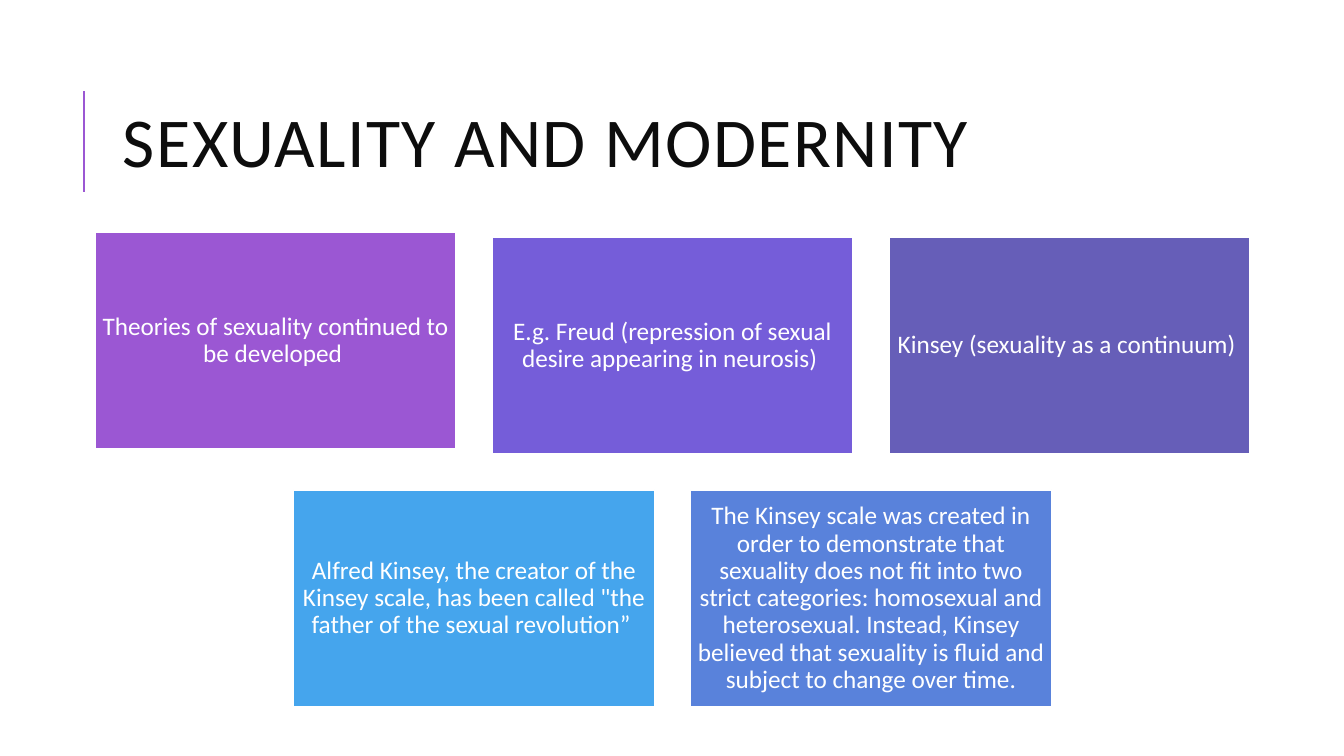
"""Build the slide on sexuality and modernity: a title over five cards."""
import pptx
import pptx.dml.color
import pptx.enum.shapes
import pptx.enum.text
import pptx.util
from dataclasses import dataclass
from lxml import etree

TITLE = "SEXUALITY AND MODERNITY"
ROWS = [
    [
        ("Theories of sexuality continued to be developed ", "9B57D3"),
        ("E.g. Freud (repression of sexual desire appearing in neurosis) ", "755DD9"),
        ("Kinsey (sexuality as a continuum) ", "665EB8"),
    ],
    [
        ("Alfred Kinsey, the creator of the Kinsey scale, has been called "
         "\"the father of the sexual revolution” ", "45A5ED"),
        ("The Kinsey scale was created in order to demonstrate that sexuality "
         "does not fit into two strict categories: homosexual and heterosexual. "
         "Instead, Kinsey believed that sexuality is fluid and subject to change "
         "over time.", "5982DB"),
    ],
]

EMU_PER_PX = 914400 / 100.8
SLIDE_W, SLIDE_H = 1344, 756
TITLE_BOX = (113, 65, 1072, 165)
RULE_X, RULE_TOP, RULE_BOTTOM = 84, 91, 192
CARD_W, CARD_H, GAP = 361, 217, 36
GRID_LEFT, GRID_TOP = 95, 237
FIRST_CARD_LIFT = 5
CARD_INSET, TITLE_INSET_X, TITLE_INSET_Y = 7, 10, 5


@dataclass(frozen=True)
class Theme:
    font: str = "Calibri"
    accent: str = "9B57D3"
    ink: str = "0D0D0D"
    white: str = "FFFFFF"
    title_size: int = 50
    card_size: int = 18
    rule_width: float = 1.5
    border_width: float = 1.25


theme = Theme()


def px(n):
    return pptx.util.Emu(round(n * EMU_PER_PX))


def rgb(code):
    return pptx.dml.color.RGBColor.from_string(code)


def write(sp, text, size, color, align="LEFT", leading=1.0, after=0, spacing=0,
          inset=(0, 0)):
    tf = sp.text_frame
    tf.word_wrap = True
    tf.vertical_anchor = pptx.enum.text.MSO_ANCHOR.MIDDLE
    tf.margin_left = tf.margin_right = px(inset[0])
    tf.margin_top = tf.margin_bottom = px(inset[1])
    p = tf.paragraphs[0]
    p.alignment = getattr(pptx.enum.text.PP_ALIGN, align)
    p.line_spacing = leading
    p.space_after = pptx.util.Pt(after)
    r = p.add_run()
    r.text = text
    r.font.name = theme.font
    r.font.size = pptx.util.Pt(size)
    r.font.color.rgb = rgb(color)
    if spacing:
        r.font._element.set("spc", str(spacing * 100))


def add_rule(s):
    line = s.shapes.add_connector(
        pptx.enum.shapes.MSO_CONNECTOR.STRAIGHT,
        px(RULE_X), px(RULE_BOTTOM), px(RULE_X), px(RULE_TOP))
    line.line.color.rgb = rgb(theme.accent)
    line.line.width = pptx.util.Pt(theme.rule_width)
    etree.SubElement(line._element.spPr, pptx.oxml.ns.qn("a:effectLst"))


def add_card(s, left, top, text, fill):
    sp = s.shapes.add_shape(pptx.enum.shapes.MSO_SHAPE.RECTANGLE,
                            px(left), px(top), px(CARD_W), px(CARD_H))
    sp.shadow.inherit = False
    sp.fill.solid()
    sp.fill.fore_color.rgb = rgb(fill)
    sp.line.color.rgb = rgb(theme.white)
    sp.line.width = pptx.util.Pt(theme.border_width)
    write(sp, text, theme.card_size, theme.white, align="CENTER", leading=0.9,
          after=6, inset=(CARD_INSET, CARD_INSET))


def main():
    prs = pptx.Presentation()
    prs.slide_width, prs.slide_height = px(SLIDE_W), px(SLIDE_H)
    s = prs.slides.add_slide(prs.slide_layouts[6])
    add_rule(s)
    title = s.shapes.add_textbox(*map(px, TITLE_BOX))
    write(title, TITLE, theme.title_size, theme.ink, leading=0.8, spacing=1,
          inset=(TITLE_INSET_X, TITLE_INSET_Y))
    columns = max(map(len, ROWS))
    for i, row in enumerate(ROWS):
        row_left = GRID_LEFT + (columns - len(row)) * (CARD_W + GAP) / 2
        for j, (text, fill) in enumerate(row):
            lift = FIRST_CARD_LIFT if i == j == 0 else 0
            add_card(s, row_left + j * (CARD_W + GAP),
                     GRID_TOP + i * (CARD_H + GAP) - lift, text, fill)
    prs.save("out.pptx")


if __name__ == "__main__":
    main()
